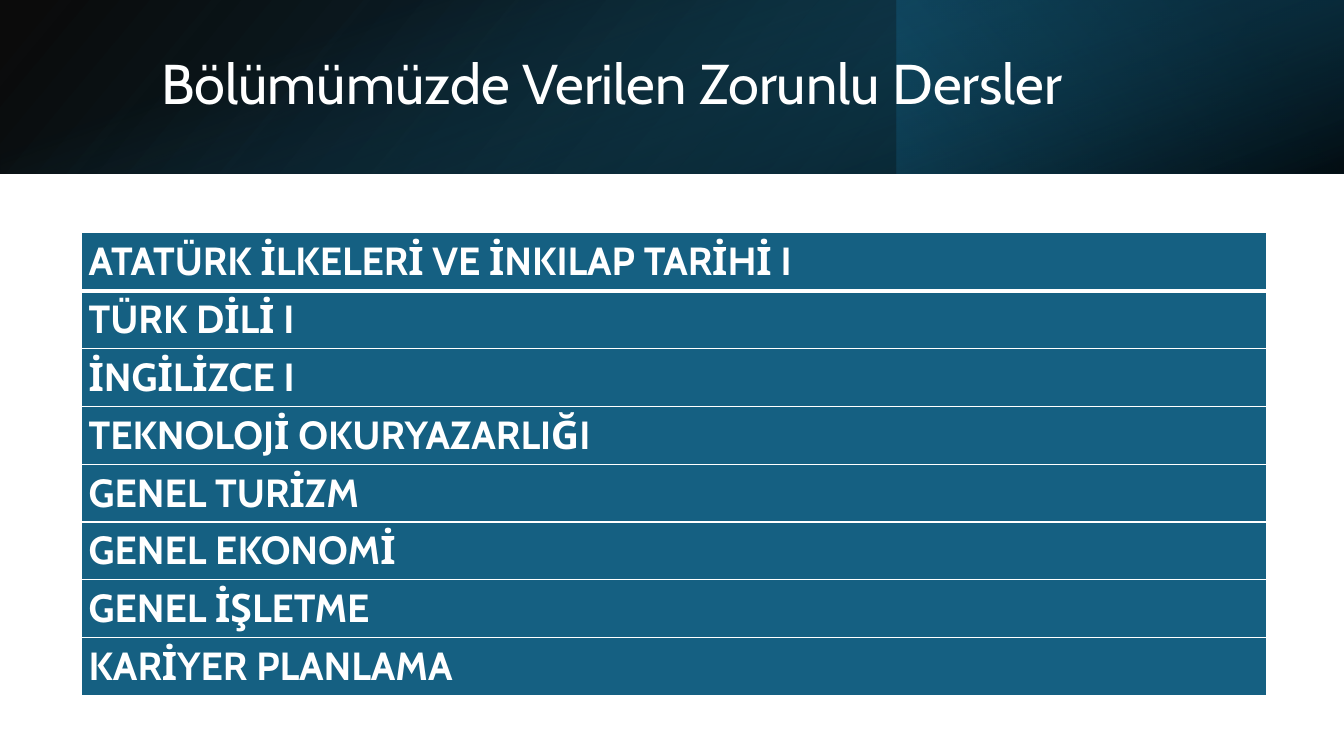
from dataclasses import dataclass

from lxml import etree
from pptx import Presentation
from pptx.dml.color import RGBColor
from pptx.enum.shapes import MSO_SHAPE
from pptx.enum.text import MSO_ANCHOR
from pptx.oxml.ns import qn
from pptx.util import Inches, Pt

RECT = MSO_SHAPE.RECTANGLE
MIDDLE = MSO_ANCHOR.MIDDLE
FONT = "Cabin"
COLORS = {
    "white": "FFFFFF",
    "black": "000000",
    "teal": "156082",
    "deep": "104862",
    "navy": "0B3041",
}
WIDE, HIGH, BAND = 13.33, 7.5, 1.72


@dataclass
class Stop:
    place: int
    color: str
    alpha: int = 100


@dataclass
class Panel:
    left: float
    top: float
    width: float
    height: float
    angle: int
    stops: list[Stop]
    turn: int = 0
    flip: bool = False


PANELS = [
    Panel(0, 0, WIDE, BAND, 140,
          [Stop(0, "black", 96), Stop(100, "deep")], flip=True),
    Panel(8.89, 0, 4.44, BAND, 320,
          [Stop(19, "navy", 68), Stop(100, "teal", 79)], turn=180),
    Panel((WIDE - BAND) / 2, (BAND - WIDE) / 2, BAND, WIDE, 340,
          [Stop(23, "teal", 0), Stop(99, "black", 74)], turn=90),
]
TITLE = "Bölümümüzde Verilen Zorunlu Dersler"
COURSES = [
    "ATATÜRK İLKELERİ VE İNKILAP TARİHİ I",
    "TÜRK DİLİ I",
    "İNGİLİZCE I",
    "TEKNOLOJİ OKURYAZARLIĞI",
    "GENEL TURİZM",
    "GENEL EKONOMİ",
    "GENEL İŞLETME",
    "KARİYER PLANLAMA",
]


def add_node(parent, tag: str, **attrs):
    return etree.SubElement(parent, qn(tag), {k: str(v) for k, v in attrs.items()})


def style_text(frame, size: int, bold: bool) -> None:
    for run in frame.paragraphs[0].runs:
        run.font.name = FONT
        run.font.size = Pt(size)
        run.font.bold = bold
        run.font.color.rgb = RGBColor.from_string(COLORS["white"])


def draw_panel(slide, panel: Panel) -> None:
    shape = slide.shapes.add_shape(
        RECT, Inches(panel.left), Inches(panel.top),
        Inches(panel.width), Inches(panel.height))
    shape.rotation = panel.turn
    shape.shadow.inherit = False
    shape.line.fill.background()
    shape.fill.background()
    props = shape._element.spPr
    if panel.flip:
        props.find(qn("a:xfrm")).set("flipH", "1")
    blank = props.find(qn("a:noFill"))
    grad = etree.Element(qn("a:gradFill"), rotWithShape="1")
    stops = add_node(grad, "a:gsLst")
    for stop in panel.stops:
        node = add_node(stops, "a:gs", pos=stop.place * 1000)
        color = add_node(node, "a:srgbClr", val=COLORS[stop.color])
        add_node(color, "a:alpha", val=stop.alpha * 1000)
    add_node(grad, "a:lin", ang=panel.angle * 60000, scaled=0)
    props.replace(blank, grad)


def draw_title(slide) -> None:
    box = slide.shapes.add_textbox(
        Inches(1.5), Inches(0.38), Inches(10.98), Inches(0.96))
    frame = box.text_frame
    frame.word_wrap = True
    frame.vertical_anchor = MIDDLE
    frame.text = TITLE
    frame.paragraphs[0].line_spacing = 0.9
    style_text(frame, 40, False)


def add_edges(cell, top: int, bottom: int) -> None:
    """Draw white cell borders, with widths in points."""
    props = cell._tc.get_or_add_tcPr()
    widths = {"a:lnL": 1, "a:lnR": 1, "a:lnT": top, "a:lnB": bottom}
    for tag, width in widths.items():
        edge = add_node(props, tag, w=Pt(width))
        fill = add_node(edge, "a:solidFill")
        add_node(fill, "a:srgbClr", val=COLORS["white"])


def draw_table(slide) -> None:
    height = Inches(4.59)
    table = slide.shapes.add_table(
        len(COURSES), 1, Inches(0.81), Inches(2.31),
        Inches(11.75), height).table
    table.first_row = False
    table.horz_banding = False
    for i, course in enumerate(COURSES):
        table.rows[i].height = height // len(COURSES)
        cell = table.cell(i, 0)
        add_edges(cell, 3 if i == 1 else 1, 3 if i == 0 else 1)
        cell.fill.solid()
        cell.fill.fore_color.rgb = RGBColor.from_string(COLORS["teal"])
        cell.margin_left = cell.margin_right = Inches(0.07)
        cell.margin_top = cell.margin_bottom = 0
        cell.vertical_anchor = MIDDLE
        cell.text_frame.text = course
        style_text(cell.text_frame, 28, True)


def main() -> None:
    deck = Presentation()
    deck.slide_width = Inches(WIDE)
    deck.slide_height = Inches(HIGH)
    slide = deck.slides.add_slide(deck.slide_layouts[6])
    for panel in PANELS:
        draw_panel(slide, panel)
    draw_title(slide)
    draw_table(slide)
    deck.save("out.pptx")


if __name__ == "__main__":
    main()
